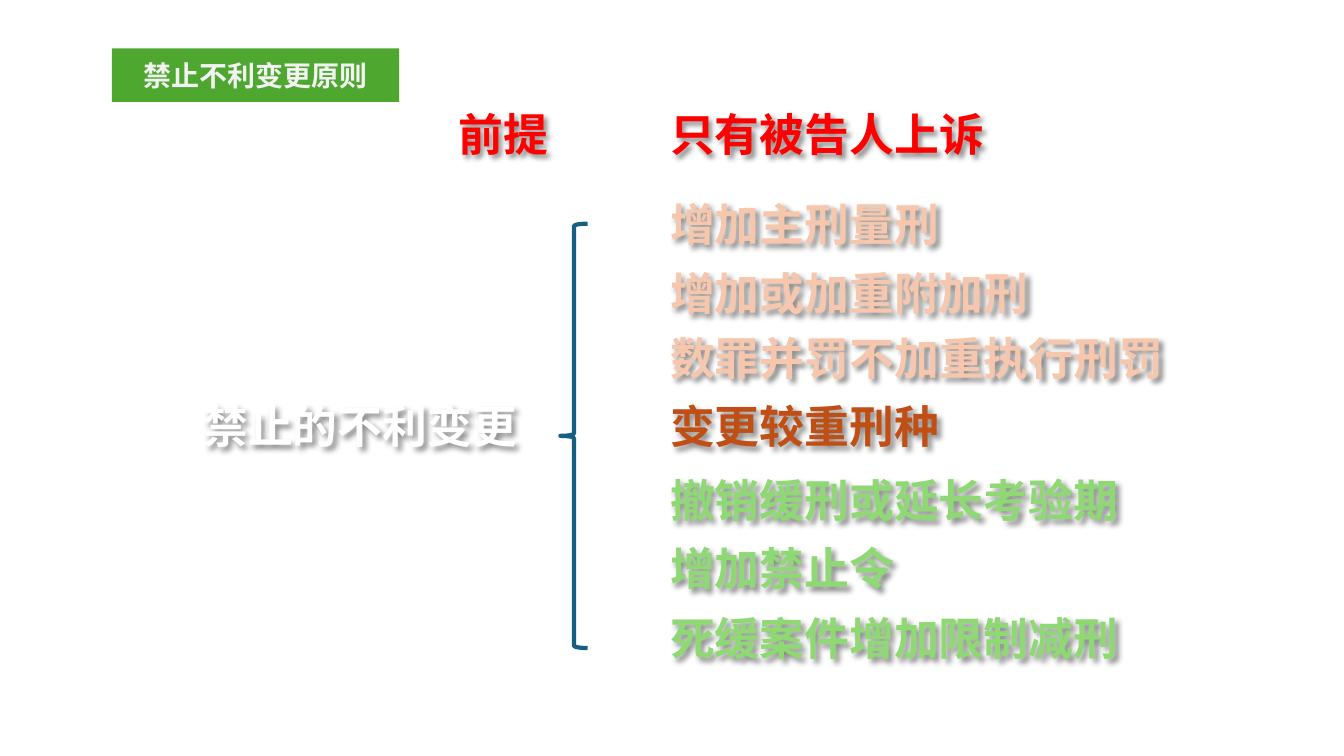
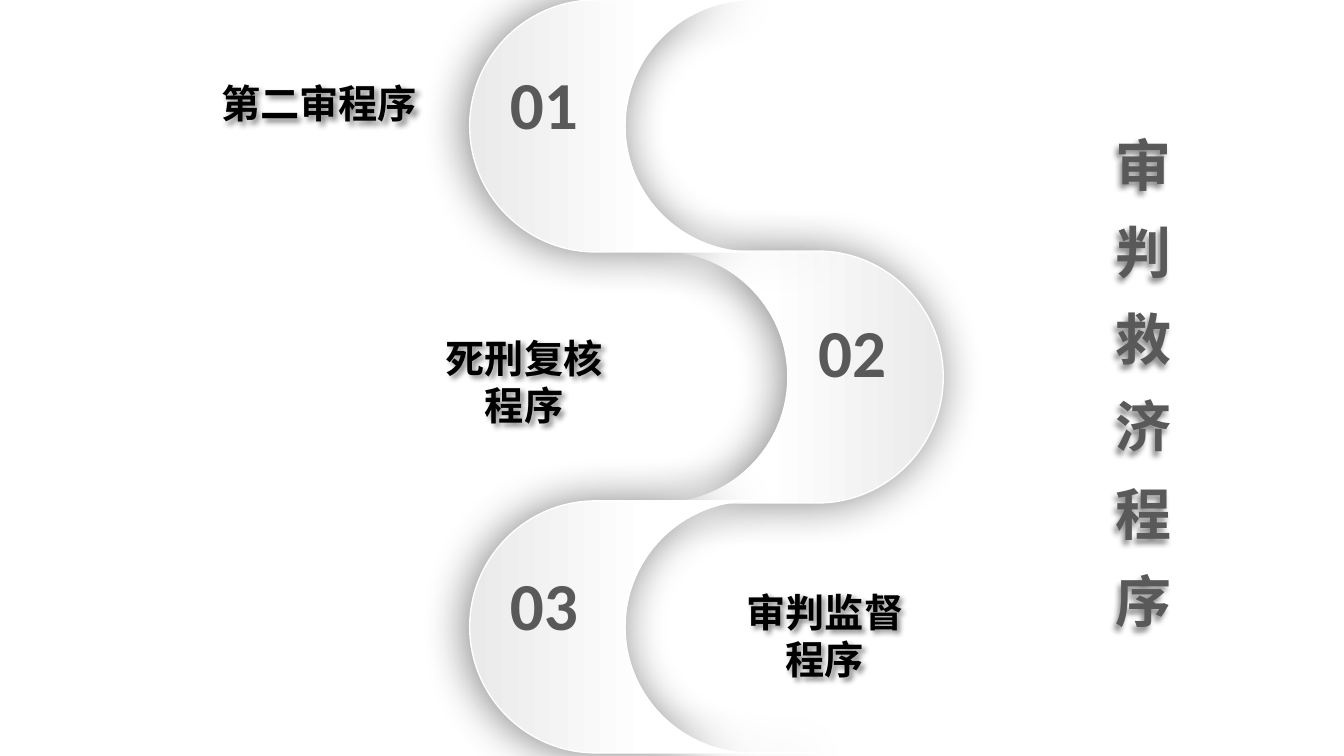
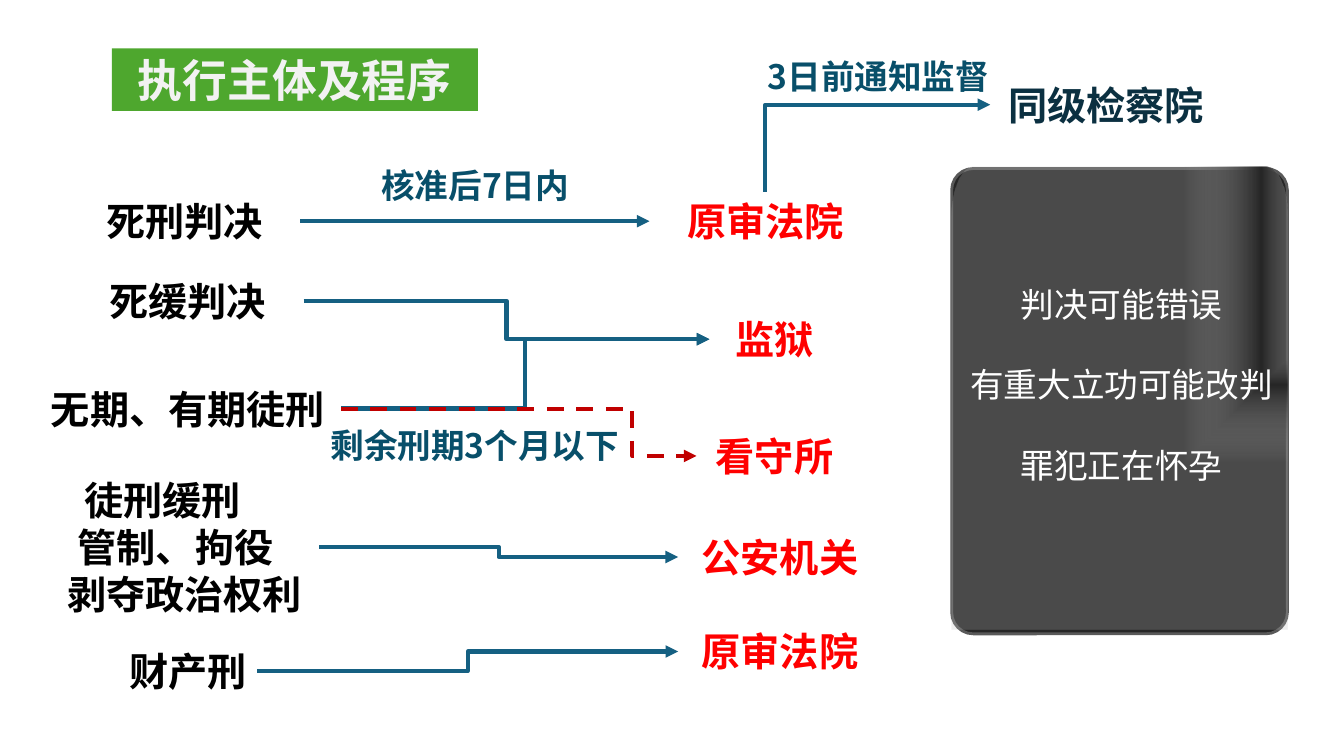
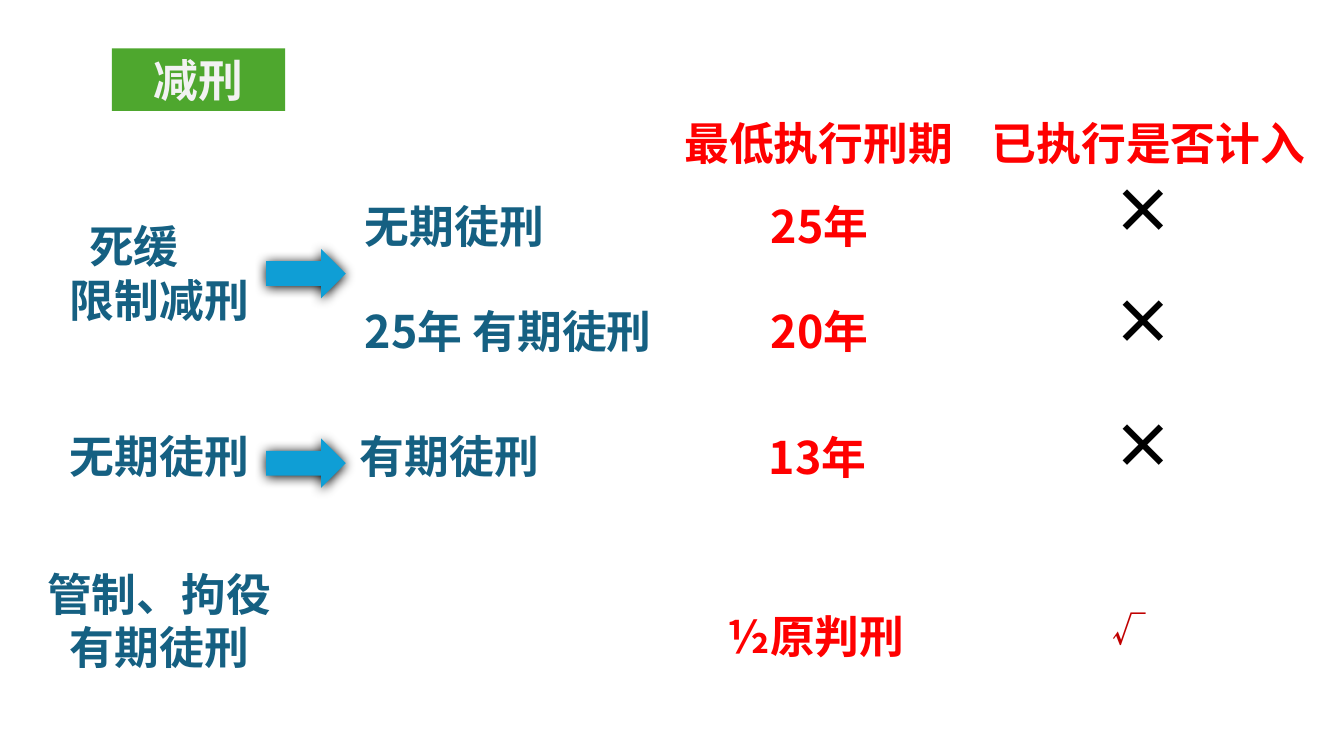
from lxml import etree
from pptx import Presentation
from pptx.dml.color import RGBColor
from pptx.enum import dml, shapes, text
from pptx.oxml.ns import qn
from pptx.util import Pt

CJK, LATIN = "Noto Sans CJK JP", "Calibri"
GREEN, PALE, BLACK, WHITE = "4EA72E", "F2F2F2", "000000", "FFFFFF"
RED, DARK_RED, GREY = "FF0000", "C00000", "595959"
TEAL, DEEP_TEAL, NAVY, BLUE = "156082", "084F6A", "0B3041", "0F9ED5"
PEACH, RUST, LIME = "F6C6AD", "C04F15", "8ED973"

LEFT, CENTER = text.PP_ALIGN.LEFT, text.PP_ALIGN.CENTER
TOP, MIDDLE = text.MSO_ANCHOR.TOP, text.MSO_ANCHOR.MIDDLE
SHAPE = shapes.MSO_SHAPE
TEXT_SHADOW = dict(blur=4, distance=3, angle=45, alpha=45)
ROUND = 0.55  # control distance of a quarter circle, as a share of its radius


def rgb(color):
    return RGBColor.from_string(color)


def points(box):
    return [Pt(length) for length in box]


def add_xml(parent, tag, **attributes):
    values = {name: str(value) for name, value in attributes.items()}
    return etree.SubElement(parent, qn(tag), values)


def add_color(parent, color, alpha=100):
    node = add_xml(parent, "a:srgbClr", val=color)
    if alpha < 100:
        add_xml(node, "a:alpha", val=alpha * 1000)


def add_shadow(shape, blur, distance, angle, alpha):
    shape.shadow.inherit = False
    effects = shape.element.spPr.find(qn("a:effectLst"))
    outer = add_xml(effects, "a:outerShdw", blurRad=Pt(blur), dist=Pt(distance),
                    dir=angle * 60000, algn="ctr", rotWithShape=0)
    add_color(outer, BLACK, alpha)


def write(shape, content, size=32, color=BLACK, bold=True, align=LEFT, font=CJK,
          anchor=TOP, line_spacing=None, gap=0, indents=(), shadow=None):
    """Fill a shape with one paragraph per line of content."""
    frame = shape.text_frame
    frame.word_wrap = True
    frame.auto_size = text.MSO_AUTO_SIZE.NONE
    frame.vertical_anchor = anchor
    frame.margin_left = frame.margin_right = Pt(7.2)
    frame.margin_top = frame.margin_bottom = Pt(3.6)
    for index, line in enumerate(content.split("\n")):
        paragraph = frame.add_paragraph() if index else frame.paragraphs[0]
        paragraph.alignment = align
        if line_spacing:
            paragraph.line_spacing = line_spacing
        if index and gap:
            paragraph.space_before = Pt(gap)
        if indents:
            paragraph._p.get_or_add_pPr().set("marL", str(Pt(indents[index])))
        run = paragraph.add_run()
        run.text = line
        run.font.size = Pt(size)
        run.font.bold = bold
        run.font.name = font
        run.font.color.rgb = rgb(color)
        add_xml(run._r.get_or_add_rPr(), "a:ea", typeface=CJK)
    if shadow:
        add_shadow(shape, **shadow)
    return shape


def add_text(slide, content, box, **style):
    return write(slide.shapes.add_textbox(*points(box)), content, **style)


def add_shape(slide, kind, box, fill=None, line=None, width=1):
    shape = slide.shapes.add_shape(kind, *points(box))
    shape.shadow.inherit = False
    paint(shape, fill, line, width)
    return shape


def paint(shape, fill=None, line=None, width=1):
    if fill:
        shape.fill.solid()
        shape.fill.fore_color.rgb = rgb(fill)
    else:
        shape.fill.background()
    if line:
        shape.line.color.rgb = rgb(line)
        shape.line.width = Pt(width)
    else:
        shape.line.fill.background()


def add_gradient(shape, stops, angle=None):
    """Stops are (position, colour, opacity); no angle means spreading from the top right."""
    shape.fill.gradient()
    gradient = shape.element.spPr.find(qn("a:gradFill"))
    gradient.clear()
    stop_list = add_xml(gradient, "a:gsLst")
    for position, color, alpha in stops:
        add_color(add_xml(stop_list, "a:gs", pos=position * 1000), color, alpha)
    if angle is None:
        spread = add_xml(gradient, "a:path", path="rect")
        add_xml(spread, "a:fillToRect", l=100000, b=100000)
    else:
        add_xml(gradient, "a:lin", ang=angle * 60000, scaled=0)


def quarter(start, corner, end):
    """Curve from start to end that is rounded towards corner: two controls and the end."""
    controls = [tuple(a + (c - a) * ROUND for a, c in zip(tip, corner))
                for tip in (start, end)]
    return [*controls, end]


def add_outline(slide, left, top, start, segments):
    """A segment of one point is a line, one of three points a curve."""
    place = [[(Pt(left + x), Pt(top + y)) for x, y in part] for part in segments]
    builder = slide.shapes.build_freeform(Pt(left + start[0]), Pt(top + start[1]))
    builder.add_line_segments([point for part in place for point in part], close=True)
    shape = builder.convert_to_shape()
    lines = iter(list(shape.element.spPr.iter(qn("a:lnTo"))))
    for part in place:
        steps = [next(lines) for _ in part]
        if len(steps) == 3:
            steps[0].addprevious(curve := etree.Element(qn("a:cubicBezTo")))
            for step in steps:
                curve.append(step[0])
                step.getparent().remove(step)
    shape.shadow.inherit = False
    paint(shape)
    return shape


def set_title(slide, content, box, **style):
    title = slide.shapes.title
    title.left, title.top, title.width, title.height = points(box)
    return write(title, content, align=CENTER, **style)


def add_badge_title(slide, content, width, height=44.6, size=32):
    badge = set_title(slide, content, (79.9, 34.6, width, height), size=size,
                      color=PALE, anchor=MIDDLE)
    outline = add_xml(badge.element.spPr, "a:prstGeom", prst="roundRect")
    add_xml(outline, "a:avLst")
    paint(badge, GREEN)


def style_connector(line, color, dashed=False, arrow="a:tailEnd"):
    line.line.color.rgb = rgb(color)
    line.line.width = Pt(3)
    if dashed:
        line.line.dash_style = dml.MSO_LINE.DASH
    add_xml(line.line._get_or_add_ln(), arrow, type="triangle")
    add_xml(line.element.spPr, "a:effectLst")


def link(slide, source, target, bend=None, color=TEAL, dashed=False):
    """Arrow from the right side of source to the left side of target."""
    kind = shapes.MSO_CONNECTOR.STRAIGHT if bend is None else shapes.MSO_CONNECTOR.ELBOW
    line = slide.shapes.add_connector(
        kind, source.left + source.width, source.top + source.height // 2,
        target.left, target.top + target.height // 2)
    if bend is None:
        line.begin_connect(source, 3)
        line.end_connect(target, 1)
    else:
        adjustments = line.element.spPr.find(qn("a:prstGeom")).find(qn("a:avLst"))
        add_xml(adjustments, "a:gd", name="adj1", fmla=f"val {round(bend * 100000)}")
    style_connector(line, color, dashed)


def link_upward(slide, source, target):
    """Arrow from the top of source up and across to the left side of target."""
    line = slide.shapes.add_connector(
        shapes.MSO_CONNECTOR.ELBOW, target.left, target.top + target.height // 2,
        source.left + source.width // 2, source.top)
    line.element.spPr.find(qn("a:prstGeom")).set("prst", "bentConnector2")
    style_connector(line, TEAL, arrow="a:headEnd")


def new_slide(deck):
    return deck.slides.add_slide(deck.slide_layouts[5])


def add_phrase(slide, content, left, top, color):
    """Shadowed line in a box as wide as its characters."""
    add_text(slide, content, (left, top, 32.4 * len(content) + 14.8, 46), color=color,
             shadow=TEXT_SHADOW)


def add_changes(slide, left):
    changes = [
        (136.8, "增加主刑量刑", PEACH), (186.5, "增加或加重附加刑", PEACH),
        (281.5, "变更较重刑种", RUST), (232.6, "数罪并罚不加重执行刑罚", PEACH),
        (334.1, "撤销缓刑或延长考验期", LIME), (383, "增加禁止令", LIME),
        (432.7, "死缓案件增加限制减刑", LIME),
    ]
    for top, change, color in changes:
        add_phrase(slide, change, left, top, color)


def build_no_worse_change(deck):
    slide = new_slide(deck)
    add_badge_title(slide, "禁止不利变更原则", 205.2, height=38.2, size=20)
    add_phrase(slide, "前提", 320.4, 72.7, RED)
    add_phrase(slide, "只有被告人上诉", 471.6, 72.7, RED)
    add_text(slide, "禁止的不利变更", (117.4, 281.5, 280, 46), color=WHITE,
             align=CENTER, shadow=TEXT_SHADOW)
    add_changes(slide, 471.6)
    add_shape(slide, SHAPE.LEFT_BRACE, (400.3, 159.8, 19.4, 303.1), line=TEAL, width=3)


def add_band(slide, left, top, mirrored=False):
    """One curve of the winding road; mirrored makes it bulge to the right."""
    width, radius, inner = 251.2, 90, 201
    bottom, hollow = 2 * radius, inner - radius
    start = (radius, 0)
    segments = [
        [(inner, 0)],
        quarter((inner, 0), (hollow, 0), (hollow, radius)),
        quarter((hollow, radius), (hollow, bottom), (inner, bottom)),
        [(width, bottom)],
        [(radius, bottom)],
        quarter((radius, bottom), (0, bottom), (0, radius)),
        quarter((0, radius), (0, 0), start),
    ]
    if mirrored:
        start = (width - radius, 0)
        segments = [[(width - x, y) for x, y in part] for part in segments]
    band = add_outline(slide, left, top, start, segments)
    add_gradient(band, [(0, "EAEAEA", 100), (51, WHITE, 100)],
                 angle=180 if mirrored else 0)
    band.line.color.rgb = rgb(WHITE)
    band.line.width = Pt(1)
    add_shadow(band, blur=32, distance=3, angle=180, alpha=47)


def build_remedies(deck):
    slide = new_slide(deck)
    set_title(slide, "审判救济程序", (789.8, 74.9, 53.3, 387.4), size=40, color=GREY,
              font=LATIN, line_spacing=1.3,
              shadow=dict(blur=4, distance=4, angle=135, alpha=45))
    add_band(slide, 422.6, 179.3, mirrored=True)
    add_band(slide, 335.5, 0)
    numbers = [(357.1, 51.8, "01"), (577.4, 229, "02"), (357.1, 409.7, "03")]
    procedures = [("死刑复核程序", (307.4, 235.4, 133.9, 74.9)),
                  ("第二审程序", (131.8, 53.3, 192.2, 41)),
                  ("审判监督程序", (516.2, 416.9, 146.2, 74.9))]
    add_band(slide, 335.5, 357.8)
    for left, top, number in numbers:
        add_text(slide, number, (left, top, 84.2, 54), size=48, color=GREY, font=LATIN,
                 line_spacing=0.8)
    for procedure, box in procedures:
        add_text(slide, procedure, box, size=28, align=CENTER, shadow=TEXT_SHADOW)


def add_suspension_panel(slide, left, top, width, height):
    panel = add_shape(slide, SHAPE.ROUNDED_RECTANGLE, (left, top, width, height),
                      fill="262626", line=GREY, width=2)
    panel.adjustments[0] = 0.064
    bottom, corner_x, corner_y = height - 1.4, 16, 36
    shoulder = width - corner_x
    gloss = add_outline(slide, left, top - 1.4, (corner_x, 0), [
        [(shoulder, 0)],
        quarter((shoulder, 0), (width, 0), (width, corner_y)),
        [(width, bottom)],
        [(0, bottom)],
        [(0, corner_y)],
        quarter((0, corner_y), (0, 0), (corner_x, 0)),
    ])
    add_gradient(gloss, [(8, GREY, 100), (25, "A6A6A6", 29),
                         (54, "262626", 100), (100, "BFBFBF", 24)])
    add_text(slide, "判决可能错误\n有重大立功可能改判\n罪犯正在怀孕",
             (left + 1.4, top + 78.5, width, 182), size=24, color=WHITE, bold=False,
             align=CENTER, gap=28.8)


def build_enforcement(deck):
    slide = new_slide(deck)
    add_badge_title(slide, "执行主体及程序", 261.4)

    def party(content, left, top, width, color=BLACK, height=41, **style):
        style = {"align": CENTER, **style}
        return add_text(slide, content, (left, top, width, height), size=28,
                        color=color, **style)

    def condition(content, left, top, width, height=36):
        add_text(slide, content, (left, top, width, height), size=24,
                 color=DEEP_TEAL, align=CENTER)

    death = party("死刑判决", 49, 137.5, 165.6)
    reprieve = party("死缓判决", 51.4, 194.4, 165.6)
    prison_term = party("无期、有期徒刑", 25.2, 271.4, 218.2)
    probation = party("徒刑缓刑\n管制、拘役\n剥夺政治权利", 36, 336.4, 192.2, height=108.8,
                      align=LEFT, indents=(17, 12.4, 5))
    property_penalty = party("财产刑", 85, 458.8, 98.7)

    trial_court = party("原审法院", 463.9, 137.5, 165.6, RED)
    prison = party("监狱", 506.7, 221.8, 92.9, RED)
    detention = party("看守所", 497.4, 305.2, 111.6, RED)
    police = party("公安机关", 484.4, 377.4, 145.4, RED)
    fine_court = party("原审法院", 484.4, 444.9, 145.4, RED)
    procurators = party("同级检察院", 707.3, 54.3, 165.6, NAVY)

    link(slide, death, trial_court)
    link_upward(slide, trial_court, procurators)
    for source, target in [(reprieve, prison), (prison_term, prison),
                           (probation, police), (property_penalty, fine_court)]:
        link(slide, source, target, bend=0.5)
    link(slide, prison_term, detention, bend=0.82, color=DARK_RED, dashed=True)

    condition("核准后7日内", 256.6, 114.5, 165.6)
    condition("3日前通知监督", 528.4, 36.2, 198)
    condition("剩余刑期3个月以下", 224.2, 300.2, 230)
    add_suspension_panel(slide, 679.8, 120.4, 239.8, 332.4)


def add_column(slide, left, width, cells, height=46, **style):
    for top, content in cells:
        add_text(slide, content, (left, top, width, height), **style)


def build_commutation(deck):
    slide = new_slide(deck)
    add_badge_title(slide, "减刑", 123.8)
    add_column(slide, 17.3, 193, [(401, "管制、拘役有期徒刑")], height=85,
               color=TEAL, align=CENTER)
    for left in (17.3, 224.6):
        prefix = "无期徒刑" if left < 200 else "有期徒刑"
        add_column(slide, left, 193, [(302.4, prefix)], color=TEAL, align=CENTER)
    add_text(slide, "死缓\n限制减刑", (37.4, 152.6, 153.4, 85), color=TEAL,
             indents=(19.2, 5.4))
    add_column(slide, 253.4, 228.2, [(138.2, "无期徒刑"), (213.1, "25年 有期徒刑")],
               color=TEAL)
    for top in (177.8, 313.2):
        arrow = add_shape(slide, SHAPE.RIGHT_ARROW, (190.1, top, 56.9, 35.3), fill=BLUE)
        add_shadow(arrow, blur=8.5, distance=1, angle=90, alpha=100)
    add_column(slide, 481.7, 229.7, [(79.2, "最低执行刑期")], color=RED)
    add_column(slide, 543.6, 105.8, [(138.2, "25年"), (213.1, "20年")], color=RED)
    add_column(slide, 542.2, 105.8, [(303.1, "13年")], color=RED)
    add_column(slide, 512.6, 167.8, [(431.3, "½原判刑")], color=RED)
    add_column(slide, 701.3, 267.8, [(79.2, "已执行是否计入")], color=RED)
    add_column(slide, 787.4, 105.8, [(119.5, "×"), (198.7, "×"), (287.4, "×")],
               height=60.5, size=44)
    add_column(slide, 787.4, 105.8, [(431.3, "√")], height=36, size=24, color=DARK_RED)


def main():
    deck = Presentation()
    deck.slide_width, deck.slide_height = Pt(960), Pt(540)
    for build in (build_no_worse_change, build_remedies, build_enforcement,
                  build_commutation):
        build(deck)
    deck.save("out.pptx")


if __name__ == "__main__":
    main()
